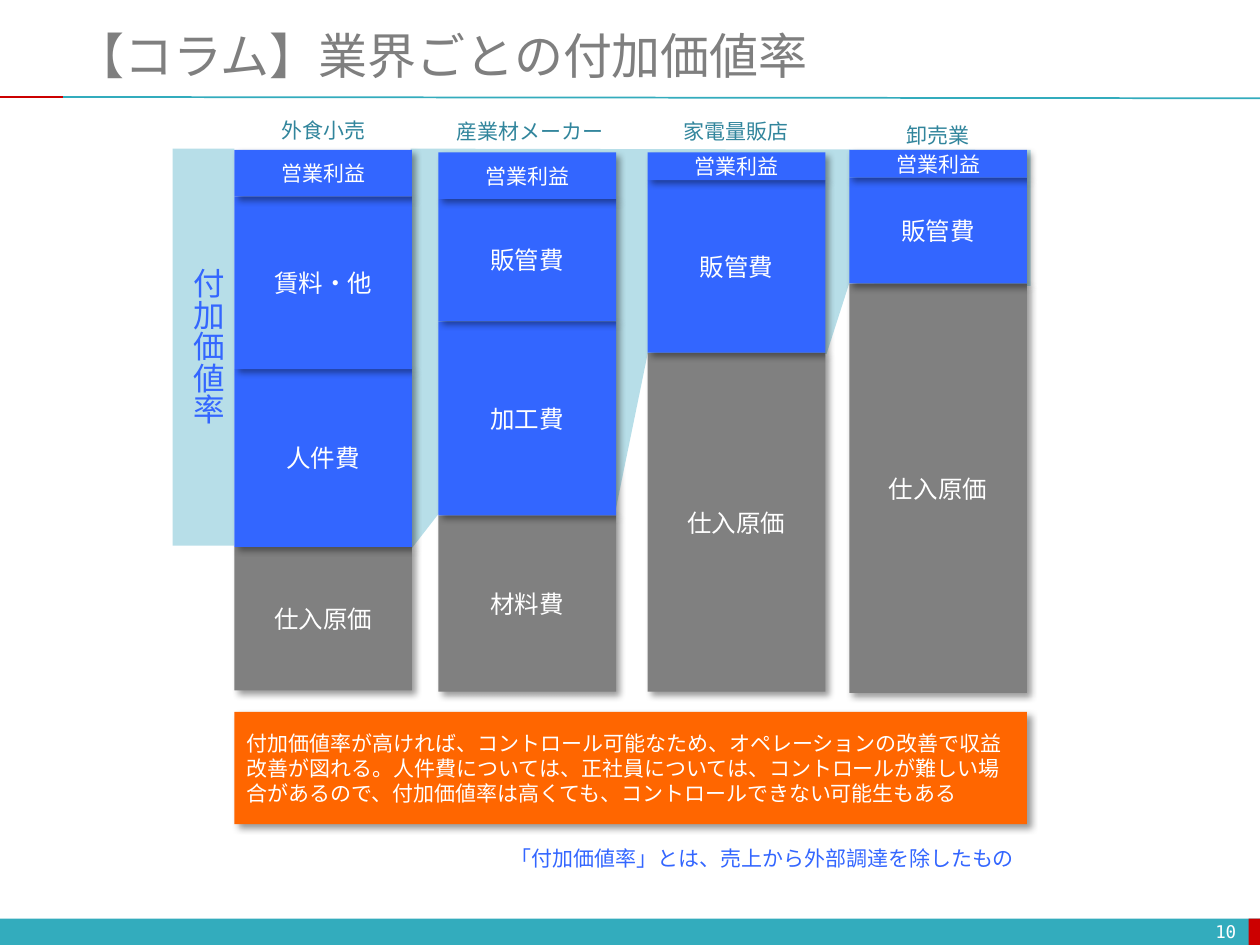
"""Build a slide comparing the added-value ratio of four industries as stacked bars."""
from lxml import etree
from pptx import Presentation
from pptx.dml.color import RGBColor
from pptx.enum.shapes import MSO_CONNECTOR, MSO_SHAPE
from pptx.enum.text import MSO_ANCHOR, PP_ALIGN
from pptx.oxml.ns import qn
from pptx.util import Inches, Pt

RECT, LINE = MSO_SHAPE.RECTANGLE, MSO_CONNECTOR.STRAIGHT
TOP, MIDDLE = MSO_ANCHOR.TOP, MSO_ANCHOR.MIDDLE
LEFT, CENTER, RIGHT = PP_ALIGN.LEFT, PP_ALIGN.CENTER, PP_ALIGN.RIGHT
TEAL = RGBColor(0x33, 0xAC, 0xBD)
RED = RGBColor(0xCC, 0x00, 0x00)
PALE = RGBColor(0xB7, 0xDE, 0xE8)
BLUE = RGBColor(0x33, 0x66, 0xFF)
GRAY = RGBColor(0x80, 0x80, 0x80)
SLATE = RGBColor(0x7F, 0x7F, 0x7F)
ORANGE = RGBColor(0xFF, 0x66, 0x00)
DARK = RGBColor(0x31, 0x85, 0x9C)
WHITE = RGBColor(0xFF, 0xFF, 0xFF)
SANS, MONO = "Noto Sans CJK JP", "DejaVu Sans Mono"

deck = Presentation()
deck.slide_width, deck.slide_height = Inches(10), Inches(7.5)
UNIT = deck.slide_width / 10
slide = deck.slides.add_slide(deck.slide_layouts[5])
shapes = slide.shapes


def write(shape, text, size, color, align=CENTER, anchor=MIDDLE, face=SANS, wrap=True):
    """Put one formatted run into a shape."""
    frame = shape.text_frame
    frame.word_wrap = wrap
    frame.vertical_anchor = anchor
    para = frame.paragraphs[0]
    para.alignment = align
    run = para.add_run()
    run.text = text
    run.font.size = Pt(size)
    run.font.name = face
    run.font.color.rgb = color
    etree.SubElement(run.font._element, qn("a:ea"), typeface=face)


def block(left, top, width, height, fill, raised=False):
    """Add a plain rectangle, with a soft shadow if raised."""
    shape = shapes.add_shape(RECT, *(round(n * UNIT) for n in (left, top, width, height)))
    shape.fill.solid()
    shape.fill.fore_color.rgb = fill
    shape.line.fill.background()
    shape.shadow.inherit = False
    if raised:
        effect = shape._element.spPr.find(qn("a:effectLst"))
        shade = etree.SubElement(effect, qn("a:outerShdw"), blurRad=str(Pt(4)),
                                 dist=str(Pt(3)), dir="2700000", algn="tl", rotWithShape="0")
        tint = etree.SubElement(shade, qn("a:srgbClr"), val="000000")
        etree.SubElement(tint, qn("a:alpha"), val="40000")
    return shape


title = shapes.title
title.left, title.top, title.width, title.height = (
    round(n * UNIT) for n in (0.5, 0.2, 9.5, 0.46))
title.text_frame.margin_top = 0
write(title, "【コラム】業界ごとの付加価値率", 28, SLATE, LEFT, TOP, "Calibri")

block(0, 7.29, 10, 0.21, TEAL)
block(9.91, 7.29, 0.09, 0.21, RED)
for start, end, drop, color in ((0.5, 10, 0.01, TEAL), (0, 0.5, 0, RED)):
    rule = shapes.add_connector(LINE, *(round(n * UNIT) for n in (start, 0.77, end, 0.77 + drop)))
    rule.line.color.rgb = color
    rule.line.width = Pt(1)
    etree.SubElement(rule._element.spPr, qn("a:effectLst"))

block(1.37, 1.18, 0.49, 3.15, PALE)
edge = [(3.26, 1.18), (8.18, 1.19), (8.18, 2.27), (6.74, 2.25), (6.56, 2.81),
        (5.14, 2.81), (4.88, 4.08), (3.48, 4.08), (3.27, 4.35)]
points = [(round(x * UNIT), round(y * UNIT)) for x, y in edge]
pen = shapes.build_freeform(*points[0])
pen.add_line_segments(points[1:], close=True)
band = pen.convert_to_shape()
band.fill.solid()
band.fill.fore_color.rgb = PALE
band.line.fill.background()
band.shadow.inherit = False

BAR = 1.41
bars = [
    (1.86, ["営業利益", "賃料・他", "人件費", "仕入原価"], [1.19, 1.56, 2.93, 4.34, 5.48]),
    (3.48, ["営業利益", "販管費", "加工費", "材料費"], [1.21, 1.58, 2.55, 4.09, 5.49]),
    (5.14, ["営業利益", "販管費", "仕入原価"], [1.21, 1.43, 2.8, 5.49]),
    (6.74, ["営業利益", "販管費", "仕入原価"], [1.19, 1.41, 2.25, 5.5]),
]
for left, names, cuts in bars:
    last = len(names) - 1
    for i in range(last, -1, -1):
        part = block(left, cuts[i], BAR, cuts[i + 1] - cuts[i], GRAY if i == last else BLUE, True)
        write(part, names[i], 14 if i else 12, WHITE)

note = block(1.86, 5.65, 6.29, 0.89, ORANGE, True)
write(note, "付加価値率が高ければ、コントロール可能なため、オペレーションの改善で収益改善が図れる。"
      "人件費については、正社員については、コントロールが難しい場合があるので、"
      "付加価値率は高くても、コントロールできない可能生もある", 12, WHITE, LEFT)

labels = [
    ((1.86, 0.88, BAR, 0.3), "外食小売", 12, DARK, CENTER, TOP, SANS, True),
    ((3.52, 0.89, 1.38, 0.3), "産業材メーカー", 12, DARK, CENTER, TOP, SANS, False),
    ((5.14, 0.89, BAR, 0.3), "家電量販店", 12, DARK, CENTER, TOP, SANS, True),
    ((6.74, 0.92, BAR, 0.3), "卸売業", 12, DARK, CENTER, TOP, SANS, True),
    ((3.76, 6.66, 4.39, 0.3), "「付加価値率」とは、売上から外部調達を除したもの",
     12, BLUE, RIGHT, TOP, SANS, True),
    ((7.58, 7.27, 2.33, 0.24), "10", 10, WHITE, RIGHT, MIDDLE, MONO, True),
    ((1.35, 2.03, 0.5, 1.36), "付加価値率", 18, BLUE, LEFT, TOP, SANS, False),
]
for place, *style in labels:
    label = shapes.add_textbox(*(round(n * UNIT) for n in place))
    write(label, *style)
label.text_frame._txBody.bodyPr.set("vert", "eaVert")

deck.save("out.pptx")
